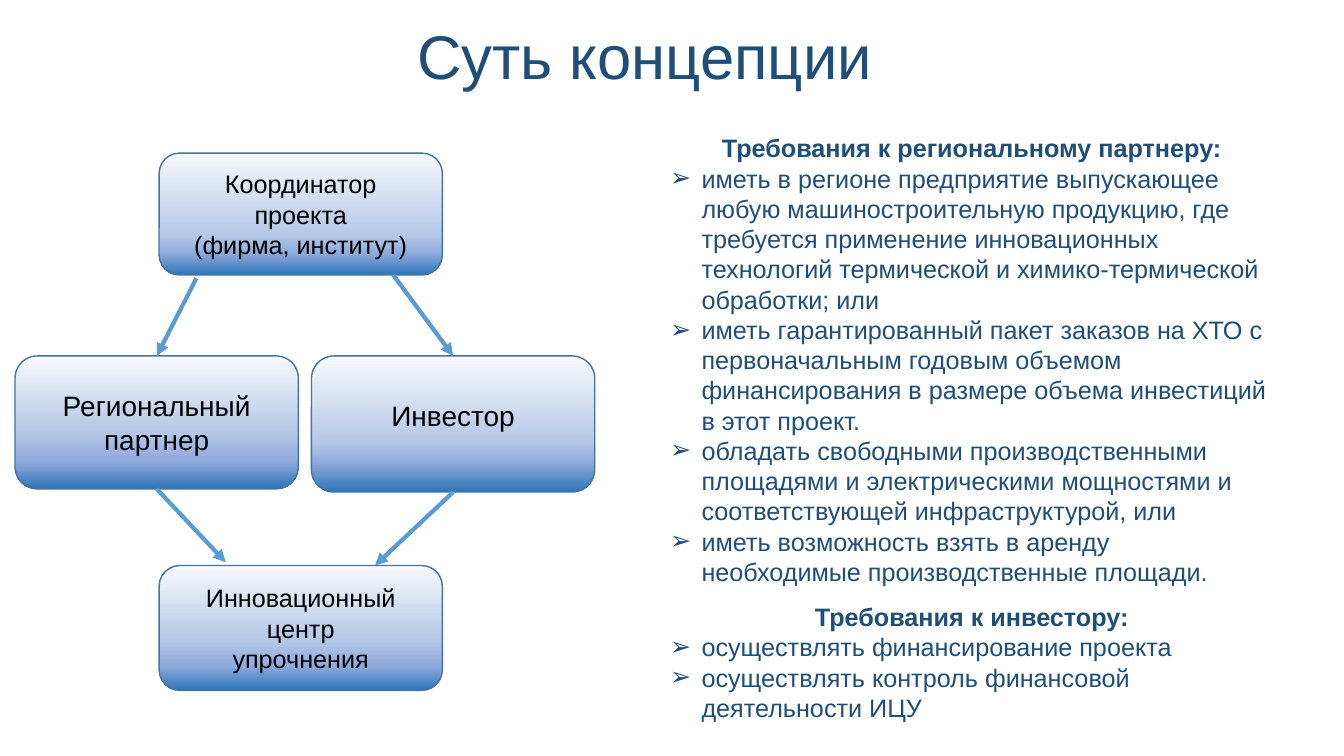
from copy import deepcopy

from lxml import etree
from pptx import Presentation
from pptx.dml.color import RGBColor
from pptx.enum.shapes import MSO_CONNECTOR, MSO_SHAPE
from pptx.enum.text import MSO_ANCHOR, PP_ALIGN
from pptx.oxml.ns import qn
from pptx.util import Cm, Pt

ROUNDED = MSO_SHAPE.ROUNDED_RECTANGLE
STRAIGHT = MSO_CONNECTOR.STRAIGHT
MIDDLE = MSO_ANCHOR.MIDDLE
CENTER, LEFT = PP_ALIGN.CENTER, PP_ALIGN.LEFT
TOP_SIDE, BOTTOM_SIDE = 0, 2
NAVY, BLACK, OUTLINE, ARROW = "1F4E79", "000000", "43739E", "5B9BD5"
GRADIENT = ["F7FAFD", "B4C7E7", "8FAADC", "2E75B6"]
NODE_WIDTH = 7.14
BULLET_INDENT = 0.79

NODES = {
    "coordinator": dict(left=3.63, top=0, height=3.07, stops=(0.68, 0.82), size=18, side=0.36,
                        bottom=0.13, lines=["Координатор проекта", "(фирма, институт)"]),
    "partner": dict(left=0, top=5.11, height=3.35, stops=(0.58, 0.79), size=20, side=0.98,
                    bottom=0.13, lines=["Региональный партнер"]),
    "investor": dict(left=7.47, top=5.11, height=3.43, stops=(0.64, 0.78), size=20, side=0.98,
                     bottom=0.56, lines=["Инвестор"]),
    "centre": dict(left=3.63, top=10.39, height=3.15, stops=(0.6, 0.8), size=18, side=0.98,
                   bottom=0.13, lines=["Инновационный центр упрочнения"]),
}
ARROWS_IN = [("partner", 4.57, 3.15), ("investor", 9.53, 3.07)]
ARROWS_OUT = [("partner", 5.31, 10.31), ("investor", 9.07, 10.39)]

REQUIREMENTS = {
    "Требования к региональному партнеру:": [
        "иметь в регионе предприятие выпускающее любую машиностроительную продукцию, где "
        "требуется применение инновационных технологий термической и химико-термической "
        "обработки; или",
        "иметь гарантированный пакет заказов на ХТО с первоначальным годовым объемом "
        "финансирования в размере объема инвестиций в этот проект.",
        "обладать свободными производственными площадями и электрическими мощностями и "
        "соответствующей инфраструктурой, или",
        "иметь возможность взять в аренду необходимые производственные площади.",
    ],
    "Требования к инвестору:": [
        "осуществлять финансирование проекта",
        "осуществлять контроль финансовой деятельности ИЦУ",
    ],
}


def color(value):
    """Turn a hex string into a colour."""
    return RGBColor.from_string(value)


def apply(target, formats):
    """Set each named format value on the target."""
    for name, value in formats.items():
        setattr(target, name, value)


def add_paragraph(frame, text, size, tint, align=CENTER, spacing=1.0, bold=False, bullet=False):
    """Write one paragraph, using the empty first one if there is one."""
    first = frame.paragraphs[0]
    para = frame.add_paragraph() if first.runs else first
    apply(para, dict(alignment=align, line_spacing=spacing))
    if bullet:
        properties = para._p.get_or_add_pPr()
        properties.set("marL", str(Cm(BULLET_INDENT)))
        properties.set("indent", str(-Cm(BULLET_INDENT)))
        etree.SubElement(properties, qn("a:buFont"), typeface="Arial")
        etree.SubElement(properties, qn("a:buChar"), char="➢")
    span = para.add_run()
    span.text = text
    apply(span.font, dict(name="Arial", size=Pt(size), bold=bold))
    span.font.color.rgb = color(tint)


def add_text_frame(page, left, top, width, height):
    """Add a wrapping text box and return its frame."""
    frame = page.shapes.add_textbox(Cm(left), Cm(top), Cm(width), Cm(height)).text_frame
    frame.word_wrap = True
    return frame


def fill_gradient(shape, positions):
    """Fill the shape with the four-step blue gradient from top to bottom."""
    shape.fill.gradient()
    shape.fill.gradient_angle = 270
    stop_list = shape._element.spPr.find(qn("a:gradFill")).find(qn("a:gsLst"))
    for _ in range(len(GRADIENT) - len(stop_list)):
        stop_list.append(deepcopy(stop_list[0]))
    for stop, position, tint in zip(shape.fill.gradient_stops, positions, GRADIENT):
        stop.position = position
        stop.color.rgb = color(tint)


def add_node(page, left, top, node):
    """Draw one rounded box with its label, relative to the diagram corner."""
    box = page.shapes.add_shape(ROUNDED, Cm(left + node["left"]), Cm(top + node["top"]),
                                Cm(NODE_WIDTH), Cm(node["height"]))
    box.shadow.inherit = False
    fill_gradient(box, (0, *node["stops"], 1))
    box.line.color.rgb = color(OUTLINE)
    box.line.width = Pt(1)
    side = Cm(node["side"])
    apply(box.text_frame, dict(word_wrap=True, vertical_anchor=MIDDLE, margin_left=side,
                               margin_right=side, margin_top=Cm(0.13),
                               margin_bottom=Cm(node["bottom"])))
    for text in node["lines"]:
        add_paragraph(box.text_frame, text, node["size"], BLACK)
    return box


def add_arrow(page, start, end):
    """Draw an arrow between two points and return it."""
    arrow = page.shapes.add_connector(STRAIGHT, *map(Cm, start), *map(Cm, end))
    arrow.line.color.rgb = color(ARROW)
    arrow.line.width = Pt(3)
    etree.SubElement(arrow.line._get_or_add_ln(), qn("a:tailEnd"), type="triangle")
    etree.SubElement(arrow._element.spPr, qn("a:effectLst"))
    return arrow


def add_title(page, left, top, width, height):
    """Place the centred slide title."""
    frame = add_text_frame(page, left, top, width, height)
    frame.vertical_anchor = MIDDLE
    add_paragraph(frame, "Суть концепции", 44, NAVY, spacing=0.9)


def add_diagram(page, left, top):
    """Place the four boxes and the arrows that join them."""
    boxes = {name: add_node(page, left, top, node) for name, node in NODES.items()}
    for name, x, y in ARROWS_IN:
        point = (left + x, top + y)
        add_arrow(page, point, point).end_connect(boxes[name], TOP_SIDE)
    for name, x, y in ARROWS_OUT:
        point = (left + x, top + y)
        add_arrow(page, point, point).begin_connect(boxes[name], BOTTOM_SIDE)


def add_requirements(page, left, top, width, height):
    """Place the headed bullet lists of requirements."""
    frame = add_text_frame(page, left, top, width, height)
    for heading, items in REQUIREMENTS.items():
        add_paragraph(frame, heading, 18, NAVY, spacing=1.5, bold=True)
        for item in items:
            add_paragraph(frame, item, 18, NAVY, align=LEFT, bullet=True)


def main():
    """Build the slide and save the deck."""
    deck = Presentation()
    apply(deck, dict(slide_width=Cm(33.87), slide_height=Cm(19.05)))
    page = deck.slides.add_slide(deck.slide_layouts[6])
    add_title(page, 1.65, -0.33, 29.21, 3.68)
    add_diagram(page, 0.38, 3.86)
    add_requirements(page, 16.64, 2.84, 15.7, 15.65)
    deck.save("out.pptx")


if __name__ == "__main__":
    main()
